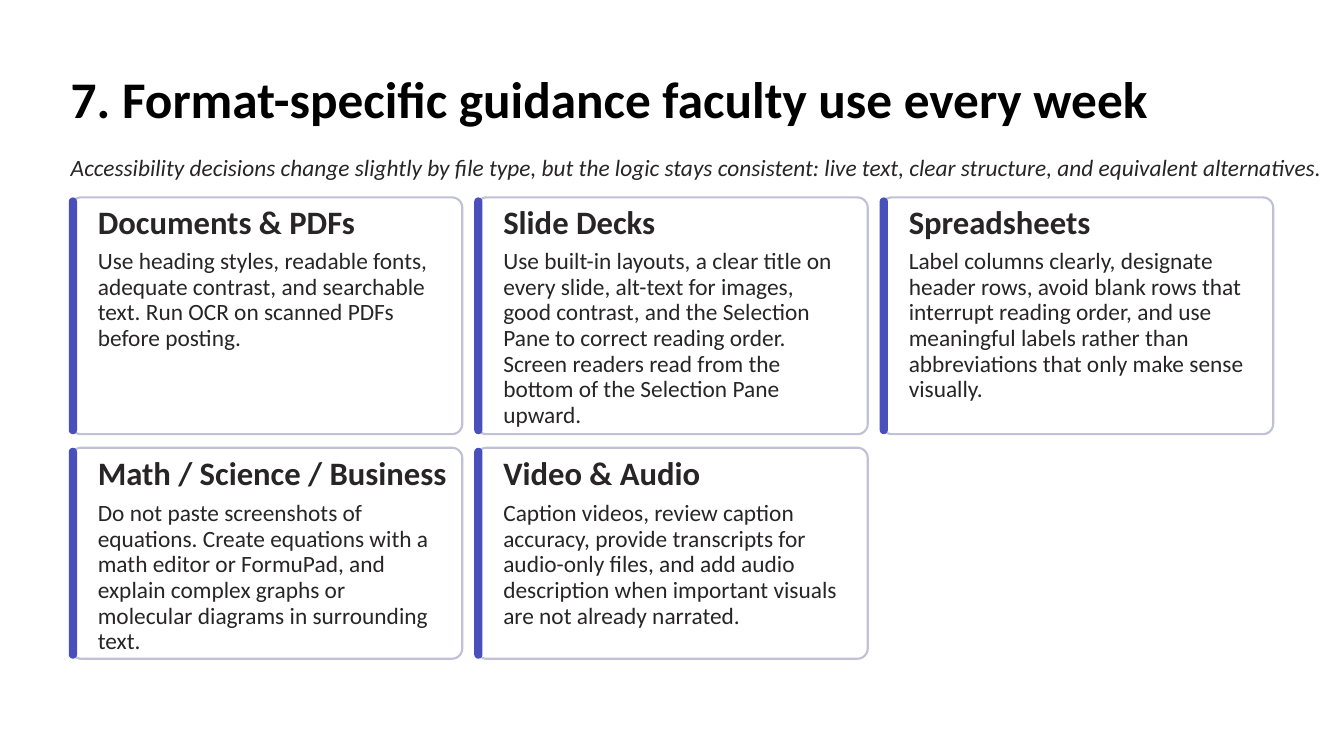
from dataclasses import dataclass
from pptx import Presentation
from pptx.dml.color import RGBColor
from pptx.enum.shapes import MSO_SHAPE
from pptx.enum.text import MSO_ANCHOR, PP_ALIGN
from pptx.util import Cm, Pt

RECT = MSO_SHAPE.RECTANGLE
ROUND = MSO_SHAPE.ROUNDED_RECTANGLE
TOP = MSO_ANCHOR.TOP
LEFT = PP_ALIGN.LEFT

TITLE = "7. Format-specific guidance faculty use every week"
INTRO = (
    "Accessibility decisions change slightly by file type, but the logic stays "
    "consistent: live text, clear structure, and equivalent alternatives."
)
CARDS = [
    ("Documents & PDFs",
     "Use heading styles, readable fonts, adequate contrast, and searchable "
     "text. Run OCR on scanned PDFs before posting."),
    ("Slide Decks",
     "Use built-in layouts, a clear title on every slide, alt-text for images, "
     "good contrast, and the Selection Pane to correct reading order. Screen "
     "readers read from the bottom of the Selection Pane upward."),
    ("Spreadsheets",
     "Label columns clearly, designate header rows, avoid blank rows that "
     "interrupt reading order, and use meaningful labels rather than "
     "abbreviations that only make sense visually."),
    ("Math / Science / Business",
     "Do not paste screenshots of equations. Create equations with a math "
     "editor or FormuPad, and explain complex graphs or molecular diagrams in "
     "surrounding text."),
    ("Video & Audio",
     "Caption videos, review caption accuracy, provide transcripts for "
     "audio-only files, and add audio description when important visuals are "
     "not already narrated."),
]


@dataclass(frozen=True)
class Theme:
    font: str = "Calibri"
    black: str = "000000"
    ink: str = "272525"
    page: str = "FFFFFF"
    card: str = "FFFFFF"
    edge: str = "C0C1D7"
    bar: str = "4950BC"
    title: float = 44
    head: float = 28
    body: float = 20
    line: float = 1.8


LOOK = Theme()
WIDE, TALL = 40.64, 22.86
COLS = 3
EDGE = 2.14
WIDTH = 11.84
GAP = 0.42
ROWS = [(5.97, 7.16, 1.55), (13.54, 6.38, 1.6)]
RADIUS = 0.31
BAR = 0.25
INDENT = 0.82

deck = Presentation()
deck.slide_width, deck.slide_height = Cm(WIDE), Cm(TALL)
slide = deck.slides.add_slide(deck.slide_layouts[6])


def write(text, x, y, w, h, size=LOOK.body, lead=22, color=LOOK.ink,
          bold=False, italic=False):
    frame = slide.shapes.add_textbox(Cm(x), Cm(y), Cm(w), Cm(h)).text_frame
    frame.margin_left = frame.margin_right = 0
    frame.margin_top = frame.margin_bottom = 0
    frame.word_wrap = True
    frame.vertical_anchor = TOP
    para = frame.paragraphs[0]
    para.alignment = LEFT
    para.line_spacing = Pt(lead)
    run = para.add_run()
    run.text = text
    font = run.font
    font.name, font.size = LOOK.font, Pt(size)
    font.bold, font.italic = bold, italic
    font.color.rgb = RGBColor.from_string(color)


def panel(x, y, w, h, fill, bend=None, line=None):
    kind = RECT if bend is None else ROUND
    shape = slide.shapes.add_shape(kind, Cm(x), Cm(y), Cm(w), Cm(h))
    if bend is not None:
        shape.adjustments[0] = bend
    shape.shadow.inherit = False
    shape.fill.solid()
    shape.fill.fore_color.rgb = RGBColor.from_string(fill)
    if line:
        shape.line.color.rgb = RGBColor.from_string(line)
        shape.line.width = Pt(LOOK.line)
    else:
        shape.line.fill.background()


panel(0, 0, WIDE, TALL, LOOK.page)
write(TITLE, EDGE, 2.11, 35.97, 1.78, size=LOOK.title, lead=50.5,
      color=LOOK.black, bold=True)
write(INTRO, EDGE, 4.71, 38.3, 0.79, italic=True)

for i, (head, body) in enumerate(CARDS):
    row, col = divmod(i, COLS)
    y, high, drop = ROWS[row]
    x = EDGE + col * (WIDTH + GAP)
    panel(x, y, WIDTH, high, LOOK.card, RADIUS / high, line=LOOK.edge)
    panel(x - 0.06, y, BAR, high, LOOK.bar, 0.5)
    write(head, x + INDENT, y + 0.45, WIDTH - INDENT, 0.89, size=LOOK.head,
          lead=25, bold=True)
    write(body, x + INDENT, y + drop, 10.39, high - drop - 0.1)

deck.save("out.pptx")
